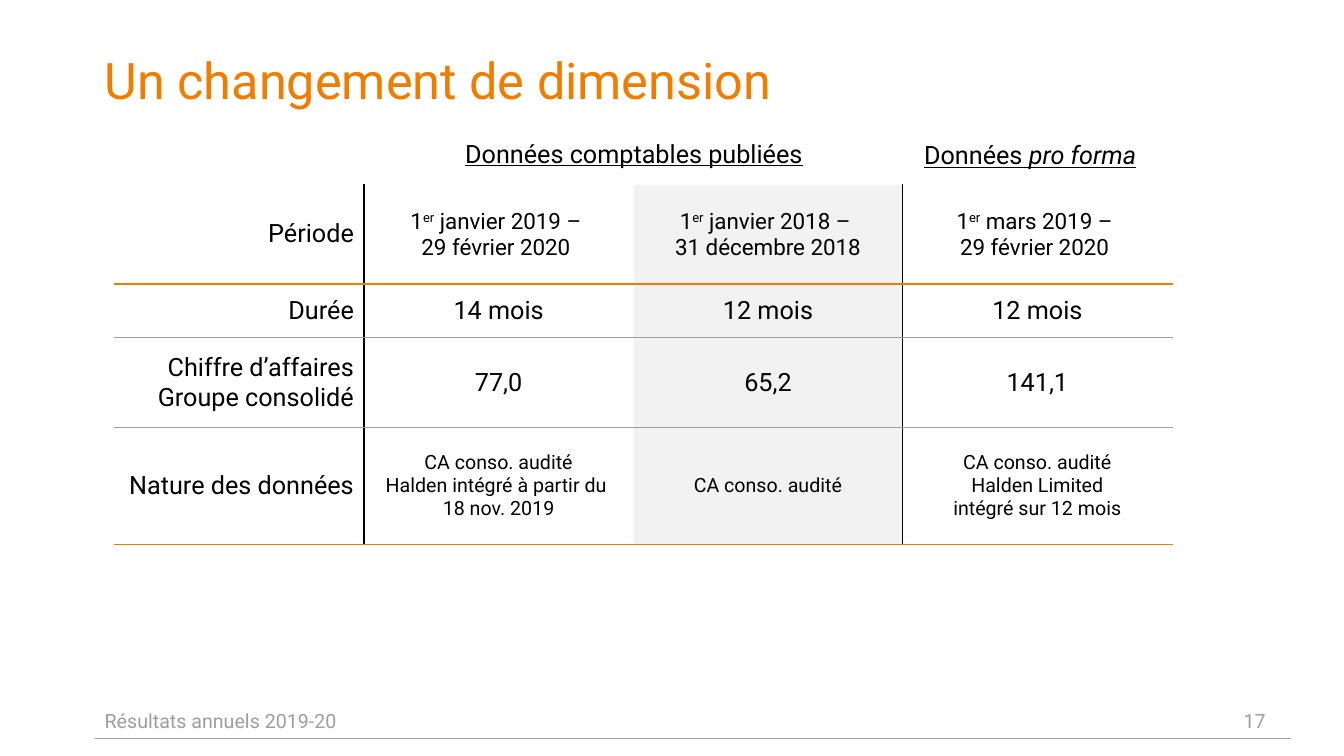
from lxml import etree
from pptx import Presentation
from pptx.dml.color import RGBColor
from pptx.enum.shapes import MSO_CONNECTOR
from pptx.enum.text import MSO_ANCHOR, PP_ALIGN
from pptx.oxml.ns import qn
from pptx.util import Pt

LEFT, CENTER, RIGHT = PP_ALIGN.LEFT, PP_ALIGN.CENTER, PP_ALIGN.RIGHT
TOP, MIDDLE = MSO_ANCHOR.TOP, MSO_ANCHOR.MIDDLE
STRAIGHT = MSO_CONNECTOR.STRAIGHT

FONT = "Roboto"
ORANGE, GREY, BLACK, PALE = "F07D00", "9E9E9D", "000000", "F2F2F2"

COL_WIDTHS = [178, 192.4, 192.4, 192.4]
ROW_HEIGHTS = [71.3, 38.2, 64.1, 83.6]
ROW_SIZES = [16, 18, 18, 14]
ROW_RULES = [(ORANGE, 1.5), (GREY, 0.75), (GREY, 0.75), (ORANGE, 1)]
RULED_COLS = (0, 2)  # columns with a black line on their right
SHADED_COL = 2


def period(start, end):
    """Two lines: '1er ...' with a raised 'er', then the end date."""
    return [["1", ("er", {"super": True}), start], [end]]


def lines(*texts):
    return [[text] for text in texts]


ROWS = [
    [lines("Période"),
     period(" janvier 2019 – ", "29 février 2020 "),
     period(" janvier 2018 – ", "31 décembre 2018"),
     period(" mars 2019 – ", "29 février 2020 ")],
    [lines("Durée"), lines("14 mois"), lines("12 mois"), lines("12 mois")],
    [lines("Chiffre d’affaires Groupe consolidé"),
     lines("77,0"), lines("65,2"), lines("141,1")],
    [lines("Nature des données"),
     lines("CA conso. audité", "Halden intégré à partir du ", "18 nov. 2019"),
     lines("CA conso. audité"),
     lines("CA conso. audité", "Halden Limited", "intégré sur 12 mois")],
]


def rgb(value):
    return RGBColor.from_string(value)


def write(tf, paragraphs, size, color=BLACK, align=LEFT, **formats):
    """Fill a text frame; a run is a string or (string, extra formats)."""
    for i, runs in enumerate(paragraphs):
        p = tf.paragraphs[0] if i == 0 else tf.add_paragraph()
        p.alignment = align
        for run in runs:
            text, extra = (run, {}) if isinstance(run, str) else run
            r = p.add_run()
            r.text = text
            r.font.color.rgb = rgb(color)
            values = {"name": FONT, "size": Pt(size), **formats, **extra}
            if values.pop("super", False):
                r._r.get_or_add_rPr().set("baseline", "30000")
            for name, value in values.items():
                setattr(r.font, name, value)


def add_text(s, box, paragraphs, size, color=BLACK, align=LEFT, anchor=TOP,
             spacing=1.0, **formats):
    tf = s.shapes.add_textbox(*(Pt(v) for v in box)).text_frame
    tf.word_wrap = True
    tf.vertical_anchor = anchor
    write(tf, paragraphs, size, color, align, **formats)
    tf.paragraphs[0].line_spacing = spacing


def add_line(s, start, end, color, width):
    line = s.shapes.add_connector(STRAIGHT, *(Pt(v) for v in start + end))
    line.line.color.rgb = rgb(color)
    line.line.width = Pt(width)
    etree.SubElement(line._element.spPr, qn("a:effectLst"))


def set_border(cell, side, color, width):
    ln = etree.SubElement(cell._tc.get_or_add_tcPr(), qn("a:ln" + side),
                          w=str(Pt(width)))
    fill = etree.SubElement(ln, qn("a:solidFill"))
    etree.SubElement(fill, qn("a:srgbClr"), val=color)


def add_cell(cell, row, col):
    # Borders come in schema order: left, right, top, bottom
    if col - 1 in RULED_COLS:
        set_border(cell, "L", BLACK, 1)
    if col in RULED_COLS:
        set_border(cell, "R", BLACK, 1)
    if row > 0:
        set_border(cell, "T", *ROW_RULES[row - 1])
    set_border(cell, "B", *ROW_RULES[row])
    if col == SHADED_COL:
        cell.fill.solid()
        cell.fill.fore_color.rgb = rgb(PALE)
    else:
        cell.fill.background()
    cell.vertical_anchor = MIDDLE
    write(cell.text_frame, ROWS[row][col],
          ROW_SIZES[row] if col else 18, align=CENTER if col else RIGHT)


def add_data_table(s, left, top):
    table = s.shapes.add_table(
        len(ROWS), len(COL_WIDTHS), Pt(left), Pt(top),
        Pt(sum(COL_WIDTHS)), Pt(sum(ROW_HEIGHTS))).table
    table.first_row = table.horz_banding = False
    for column, width in zip(table.columns, COL_WIDTHS):
        column.width = Pt(width)
    for row, height in enumerate(ROW_HEIGHTS):
        table.rows[row].height = Pt(height)
        for col in range(len(COL_WIDTHS)):
            add_cell(table.cell(row, col), row, col)


def main():
    prs = Presentation()
    prs.slide_width, prs.slide_height = Pt(960), Pt(540)
    s = prs.slides.add_slide(prs.slide_layouts[6])

    # Title
    add_text(s, (67.7, 36.7, 854.6, 52), lines("Un changement de dimension"),
             36, ORANGE, spacing=0.9)

    # Footer
    add_line(s, (922.3, 527), (67.7, 527), GREY, 0.25)
    add_text(s, (67.7, 500.4, 602.6, 28.8), lines("Résultats annuels 2019-20"),
             14, GREY, anchor=MIDDLE)
    add_text(s, (881.3, 500.4, 41, 28.8), lines("17"), 14, GREY, anchor=MIDDLE)

    # Table and the headings above its column groups
    add_data_table(s, 82, 131.8)
    add_text(s, (285.1, 95, 335.5, 29), lines("Données comptables publiées"),
             18, align=CENTER, underline=True)
    add_text(s, (568.1, 96.2, 335.5, 29),
             [["Données ", ("pro forma", {"italic": True})]],
             18, align=CENTER, underline=True)

    prs.save("out.pptx")


if __name__ == "__main__":
    main()
